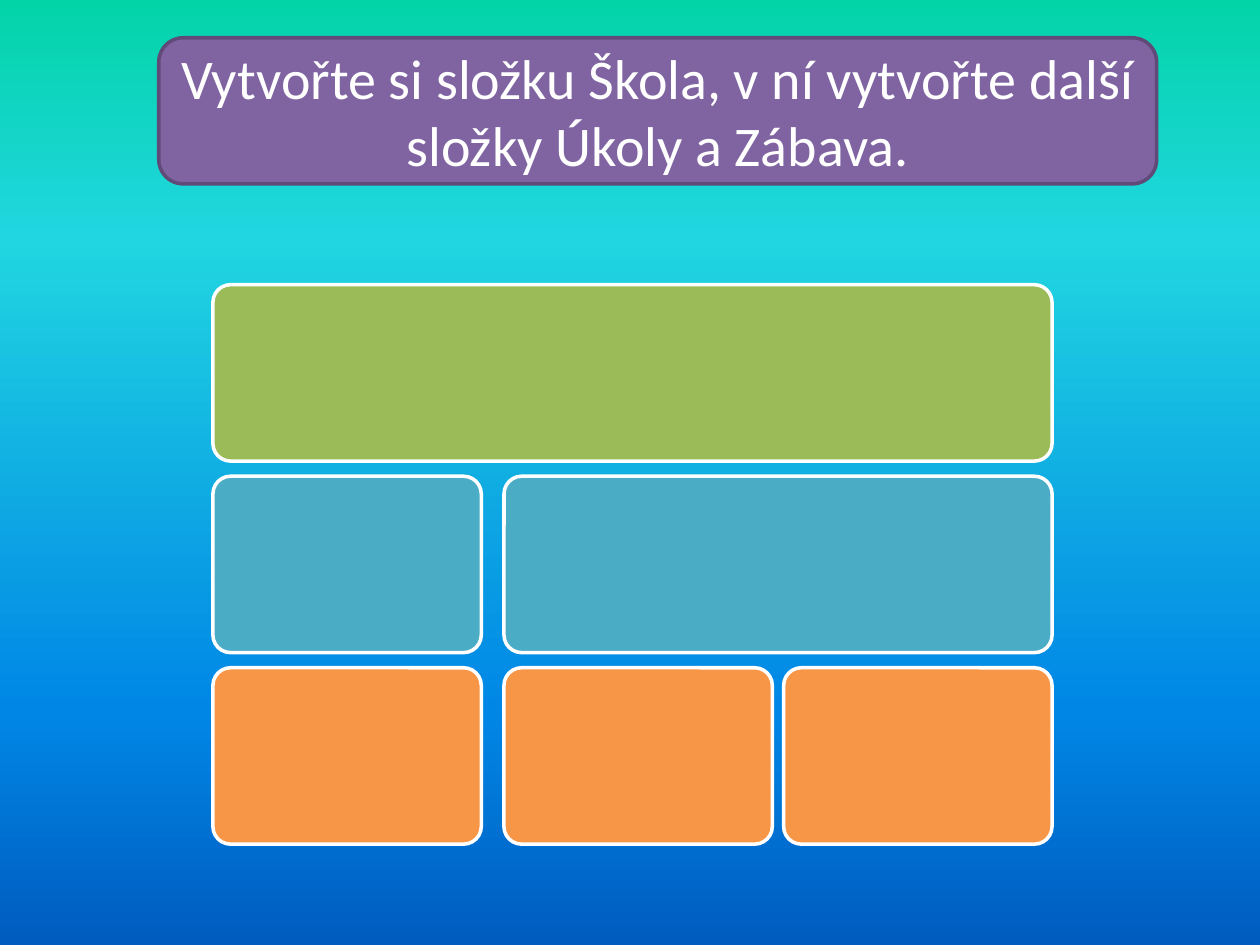
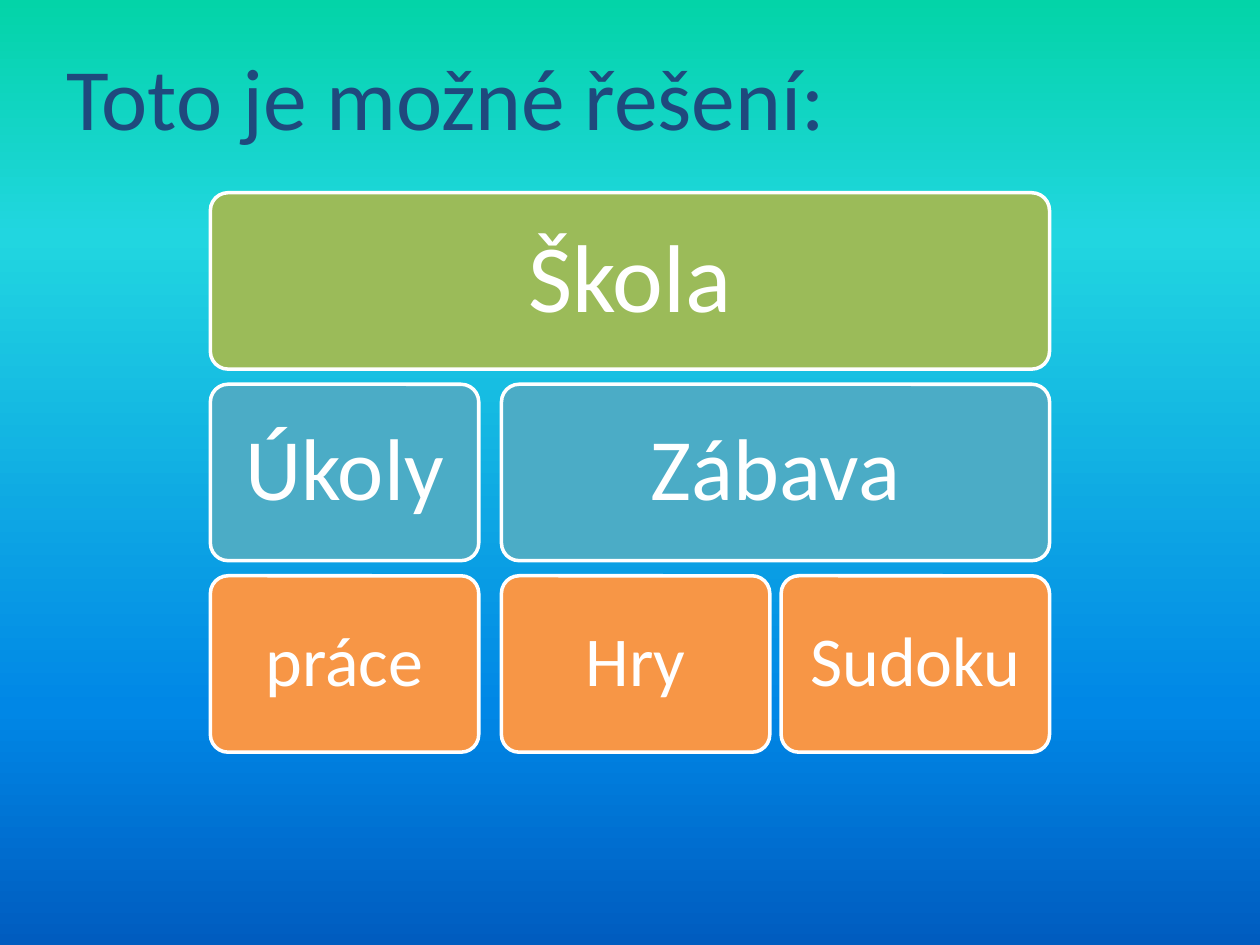
from lxml import etree
from pptx import Presentation
from pptx.dml.color import RGBColor
from pptx.enum.shapes import MSO_SHAPE
from pptx.enum.text import MSO_ANCHOR, PP_ALIGN
from pptx.oxml.ns import qn
from pptx.util import Inches, Pt

ROUNDED, BANNER = MSO_SHAPE.ROUNDED_RECTANGLE, MSO_SHAPE.FLOWCHART_ALTERNATE_PROCESS
MIDDLE, TOP = MSO_ANCHOR.MIDDLE, MSO_ANCHOR.TOP
CENTER, LEFT = PP_ALIGN.CENTER, PP_ALIGN.LEFT

# Content: folder tree as (name, subfolders)
TASK = "Vytvořte si složku Škola, v ní vytvořte další složky Úkoly a Zábava."
SOLUTION_TITLE = "Toto je možné řešení:"
FOLDERS = ("Škola", [
    ("Úkoly", [("práce", [])]),
    ("Zábava", [("Hry", []), ("Sudoku", [])]),
])

# Shared look
FONT = "Calibri"
WHITE = RGBColor(0xFF, 0xFF, 0xFF)
NAVY = RGBColor(0x1F, 0x49, 0x7D)
PURPLE = RGBColor(0x80, 0x64, 0xA2)
DARK_PURPLE = RGBColor(0x5F, 0x4A, 0x78)
GREEN = RGBColor(0x9B, 0xBB, 0x59)
TEAL = RGBColor(0x4B, 0xAC, 0xC6)
ORANGE = RGBColor(0xF7, 0x96, 0x46)
BACKGROUND_STOPS = [
    (0, RGBColor(0x03, 0xD4, 0xA8)),
    (25, RGBColor(0x21, 0xD6, 0xE0)),
    (75, RGBColor(0x00, 0x87, 0xE6)),
    (100, RGBColor(0x00, 0x5C, 0xBF)),
]

# Tree levels: (fill, text size, inset, gap between subfolders)
LEVELS = [(GREEN, 55, 0.23, 0.18), (TEAL, 50, 0.21, 0.09), (ORANGE, 40, 0.17, 0)]
FOLDER_WIDTH, FOLDER_HEIGHT, ROW_PITCH = 2.13, 1.4, 1.52


def paint_background(master):
    fill = master.background.fill
    fill.gradient()
    fill.gradient_angle = 270
    stops = master.element.find(".//" + qn("p:bg")).find(".//" + qn("a:gsLst"))
    for old_stop in list(stops):
        stops.remove(old_stop)
    for percent, color in BACKGROUND_STOPS:
        stop = etree.SubElement(stops, qn("a:gs"), pos=str(percent * 1000))
        etree.SubElement(stop, qn("a:srgbClr"), val=str(color))


def write(shape, text, size, color, align, anchor):
    frame = shape.text_frame
    frame.word_wrap = True
    frame.vertical_anchor = anchor
    paragraph = frame.paragraphs[0]
    paragraph.alignment = align
    run = paragraph.add_run()
    run.text = text
    run.font.name, run.font.size = FONT, Pt(size)
    run.font.color.rgb = color
    return frame


def add_box(shapes, kind, place, fill, outline):
    box = shapes.add_shape(kind, *(Inches(value) for value in place))
    box.shadow.inherit = False
    box.fill.solid()
    box.fill.fore_color.rgb = fill
    box.line.color.rgb = outline
    box.line.width = Pt(2)
    return box


def folder_width(folder, level):
    children = folder[1]
    if not children:
        return FOLDER_WIDTH
    gaps = LEVELS[level][3] * (len(children) - 1)
    return sum(folder_width(child, level + 1) for child in children) + gaps


def draw_folder(shapes, folder, left, top, labelled, level=0):
    """Draw a folder, then its subfolders side by side beneath it."""
    name, children = folder
    fill, size, inset, gap = LEVELS[level]
    place = (left, top, folder_width(folder, level), FOLDER_HEIGHT)
    box = add_box(shapes, ROUNDED, place, fill, WHITE)
    box.adjustments[0] = 0.1
    if labelled:
        frame = write(box, name, size, WHITE, CENTER, MIDDLE)
        frame.paragraphs[0].line_spacing = 0.9
        frame.margin_left = frame.margin_right = Inches(inset)
        frame.margin_top = frame.margin_bottom = Inches(inset)
    for child in children:
        draw_folder(shapes, child, left, top + ROW_PITCH, labelled, level + 1)
        left += folder_width(child, level + 1) + gap


def main():
    prs = Presentation()
    prs.slide_width, prs.slide_height = Inches(10), Inches(7.5)
    paint_background(prs.slide_master)
    title_only, blank = prs.slide_layouts[5], prs.slide_layouts[6]

    # Slide 1: the task with an empty tree
    task = prs.slides.add_slide(blank)
    draw_folder(task.shapes.add_group_shape().shapes, FOLDERS, 1.69, 2.26, False)
    banner = add_box(task.shapes, BANNER, (1.26, 0.3, 7.92, 1.16), PURPLE, DARK_PURPLE)
    write(banner, TASK, 32, WHITE, CENTER, MIDDLE)

    # Slide 2: the solution with named folders
    solution = prs.slides.add_slide(title_only)
    draw_folder(solution.shapes.add_group_shape().shapes, FOLDERS, 1.67, 1.53, True)
    title = solution.shapes.title
    title.left, title.top = Inches(0.43), Inches(0.29)
    title.width, title.height = Inches(9.08), Inches(1.25)
    write(title, SOLUTION_TITLE, 50, NAVY, LEFT, TOP)

    prs.save("out.pptx")


if __name__ == "__main__":
    main()
